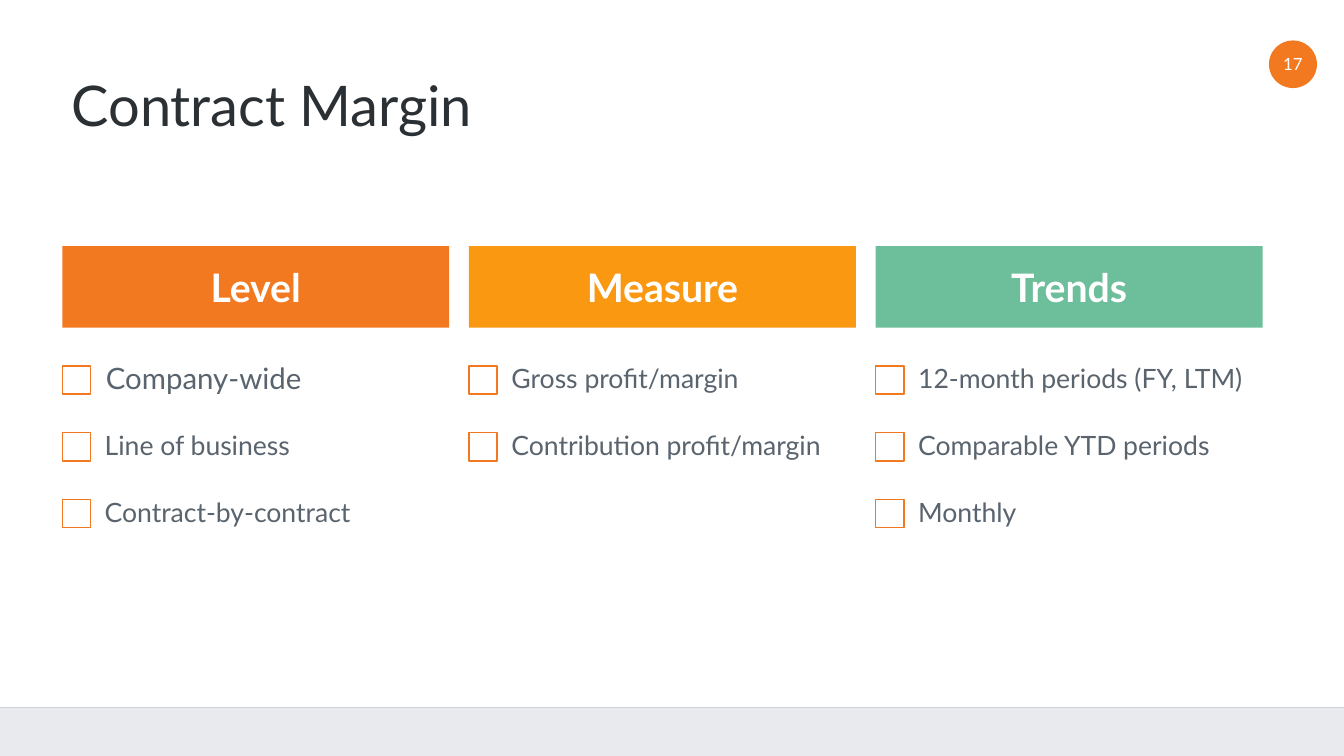
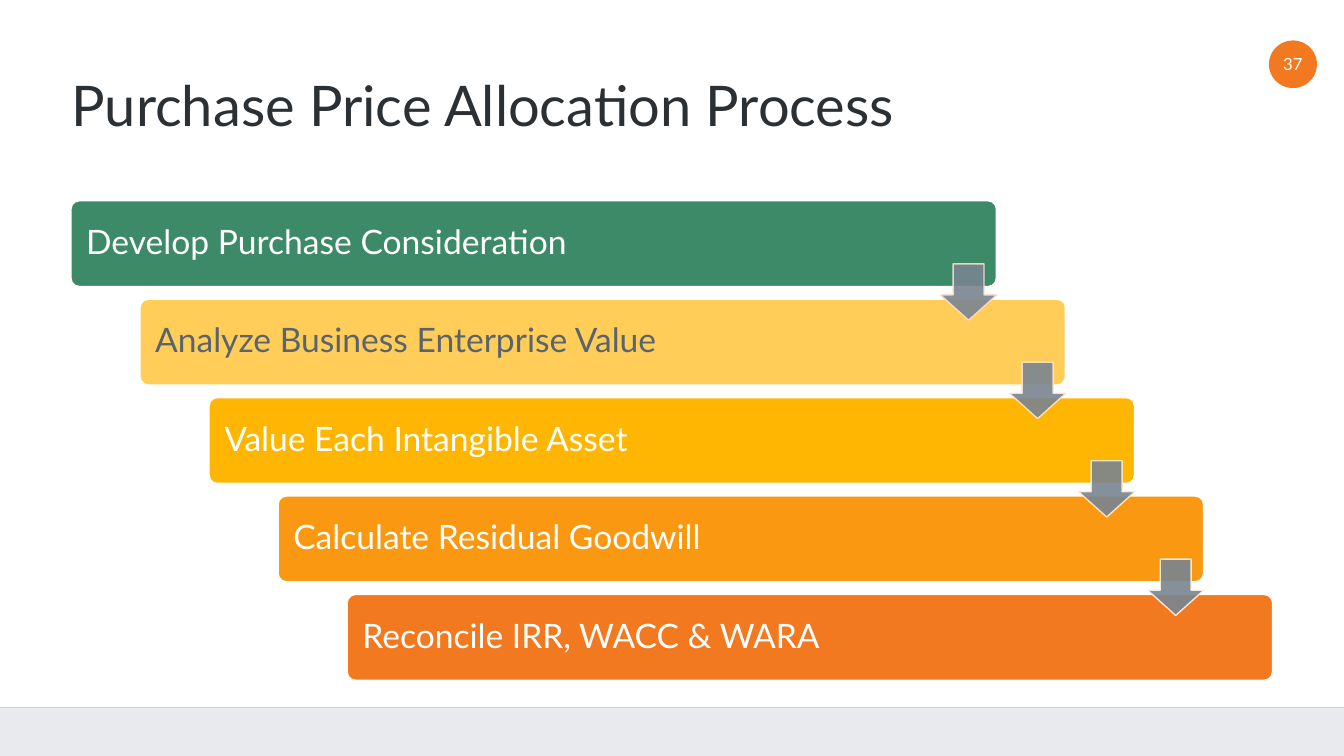
import pptx
import pptx.dml.color
import pptx.enum.shapes
import pptx.enum.text
import pptx.oxml
import pptx.oxml.ns
import pptx.util

Cm = pptx.util.Cm
Pt = pptx.util.Pt
SHAPES = pptx.enum.shapes.MSO_SHAPE
ALIGN = pptx.enum.text.PP_ALIGN
MIDDLE = pptx.enum.text.MSO_ANCHOR.MIDDLE

# Content
CHECKLISTS = {
    "title": "Contract Margin",
    "number": "17",
    "columns": [
        ("Level", "F37920",
         ["Company-wide", "Line of business", "Contract-by-contract"]),
        ("Measure", "FA9811",
         ["Gross profit/margin", "Contribution profit/margin"]),
        ("Trends", "6DBE9A",
         ["12-month periods (FY, LTM)", "Comparable YTD periods", "Monthly"]),
    ],
}
PROCESS = {
    "title": "Purchase Price Allocation Process",
    "number": "37",
    # text, bar colour, text colour
    "steps": [
        ("Develop Purchase Consideration", "3D8A68", "FFFFFF"),
        ("Analyze Business Enterprise Value", "FFCD58", "59646E"),
        ("Value Each Intangible Asset", "FFB602", "FFFFFF"),
        ("Calculate Residual Goodwill", "FA9811", "FFFFFF"),
        ("Reconcile IRR, WACC & WARA", "F37920", "FFFFFF"),
    ],
    "arrow_outlines": ["FDDDCC", "FFE5CC", "FFEDD1", "FFF4E3"],
}

# Shared look
WHITE, ACCENT, BODY, HEADING = "FFFFFF", "F37920", "59646E", "2B3034"
BAND, BAND_EDGE, ARROW = "E8EAED", "CED2D8", "788591"
FONT = "Lato"
SLIDE_W, SLIDE_H, BAND_TOP = 33.87, 19.05, 17.83
TITLE_PLACE = {"left": 1.55, "top": 1.02, "width": 30.78, "height": 3.43}


def rgb(colour):
    return pptx.dml.color.RGBColor.from_string(colour)


def apply(target, values):
    for name, value in values.items():
        setattr(target, name, value)


def write(shape, text, size, colour, bold=False, align=ALIGN.LEFT,
          spacing=None, inset=None):
    frame = shape.text_frame
    frame.text = text
    apply(frame, {"word_wrap": True, "vertical_anchor": MIDDLE,
                  "auto_size": pptx.enum.text.MSO_AUTO_SIZE.NONE})
    if inset is not None:
        sides = ("left", "top", "right", "bottom")
        apply(frame, {f"margin_{side}": Cm(inset) for side in sides})
    paragraph = frame.paragraphs[0]
    apply(paragraph, {"alignment": align, "line_spacing": spacing})
    apply(paragraph.font, {"name": FONT, "size": Pt(size), "bold": bold})
    paragraph.font.color.rgb = rgb(colour)


def add_block(slide, kind, left, top, width, height, fill,
              outline=None, weight=1):
    block = slide.shapes.add_shape(
        kind, Cm(left), Cm(top), Cm(width), Cm(height))
    block.shadow.inherit = False
    block.fill.solid()
    block.fill.fore_color.rgb = rgb(fill)
    if outline:
        block.line.color.rgb = rgb(outline)
        block.line.width = Pt(weight)
    else:
        block.line.fill.background()
    return block


def add_band(slide):
    """Draw the bottom band, then hand it to the layout that all slides use."""
    band = add_block(slide, SHAPES.RECTANGLE, 0, BAND_TOP, SLIDE_W,
                     SLIDE_H - BAND_TOP, BAND)
    edge = slide.shapes.add_connector(
        pptx.enum.shapes.MSO_CONNECTOR.STRAIGHT,
        Cm(0), Cm(BAND_TOP), Cm(SLIDE_W), Cm(BAND_TOP))
    edge.line.color.rgb = rgb(BAND_EDGE)
    edge.line.width = Pt(0.75)
    pptx.oxml.ns.qn("a:effectLst")
    edge.element.spPr.append(
        pptx.oxml.parse_xml(f"<a:effectLst {pptx.oxml.ns.nsdecls('a')}/>"))
    for part in (band, edge):
        slide.slide_layout.shapes.element.append(part.element)


def add_slide(deck, content):
    slide = deck.slides.add_slide(deck.slide_layouts[5])
    title = slide.shapes.title
    apply(title, {side: Cm(length) for side, length in TITLE_PLACE.items()})
    write(title, content["title"], 40, HEADING, spacing=0.9)
    badge = add_block(slide, SHAPES.OVAL, 31.98, 1.02, 1.21, 1.2, ACCENT)
    write(badge, content["number"], 12, WHITE, align=ALIGN.CENTER, inset=0)
    return slide


def draw_checklists(slide, columns):
    left, column_step, column_width = 1.57, 10.25, 9.75
    header_top, header_height = 6.2, 2.06
    rows_top, row_height = 8.74, 1.68
    box, indent = 0.71, 0.69
    for column, (header, colour, items) in enumerate(columns):
        x = left + column * column_step
        heading = add_block(slide, SHAPES.RECTANGLE, x, header_top,
                            column_width, header_height, colour)
        write(heading, header, 28, WHITE, bold=True, align=ALIGN.CENTER)
        for row, item in enumerate(items):
            y = rows_top + row * row_height
            add_block(slide, SHAPES.RECTANGLE, x, y + (row_height - box) / 2,
                      box, box, WHITE, ACCENT)
            label = slide.shapes.add_textbox(
                Cm(x + indent), Cm(y), Cm(column_width - indent),
                Cm(row_height))
            # The opening item is set slightly larger
            size, inset = (21, 0.41) if column == row == 0 else (19, 0.38)
            write(label, item, size, BODY, spacing=0.9, inset=inset)


def draw_process(slide, steps, arrow_outlines):
    left, top, step_x, step_y = 1.78, 5.05, 1.74, 2.48
    bar_width, bar_height, arrow_size, arrow_drop = 23.34, 2.18, 1.42, 1.6
    for i, (text, fill, colour) in enumerate(steps):
        bar = add_block(slide, SHAPES.ROUNDED_RECTANGLE, left + i * step_x,
                        top + i * step_y, bar_width, bar_height, fill,
                        WHITE, 1.5)
        bar.adjustments[0] = 0.1
        write(bar, text, 24, colour, spacing=0.9, inset=0.33)
    # Arrows end flush with the right edge of the bar they leave
    for i, outline in enumerate(arrow_outlines):
        arrow = add_block(slide, SHAPES.DOWN_ARROW,
                          left + i * step_x + bar_width - arrow_size,
                          top + i * step_y + arrow_drop,
                          arrow_size, arrow_size, ARROW, outline)
        arrow.adjustments[0], arrow.adjustments[1] = 0.55, 0.45
        for tint in arrow.element.spPr.iter(pptx.oxml.ns.qn("a:srgbClr")):
            tint.append(pptx.oxml.parse_xml(
                f'<a:alpha {pptx.oxml.ns.nsdecls("a")} val="90000"/>'))


def main():
    deck = pptx.Presentation()
    deck.slide_width, deck.slide_height = Cm(SLIDE_W), Cm(SLIDE_H)
    checklists = add_slide(deck, CHECKLISTS)
    add_band(checklists)
    draw_checklists(checklists, CHECKLISTS["columns"])
    process = add_slide(deck, PROCESS)
    draw_process(process, PROCESS["steps"], PROCESS["arrow_outlines"])
    deck.save("out.pptx")


if __name__ == "__main__":
    main()
